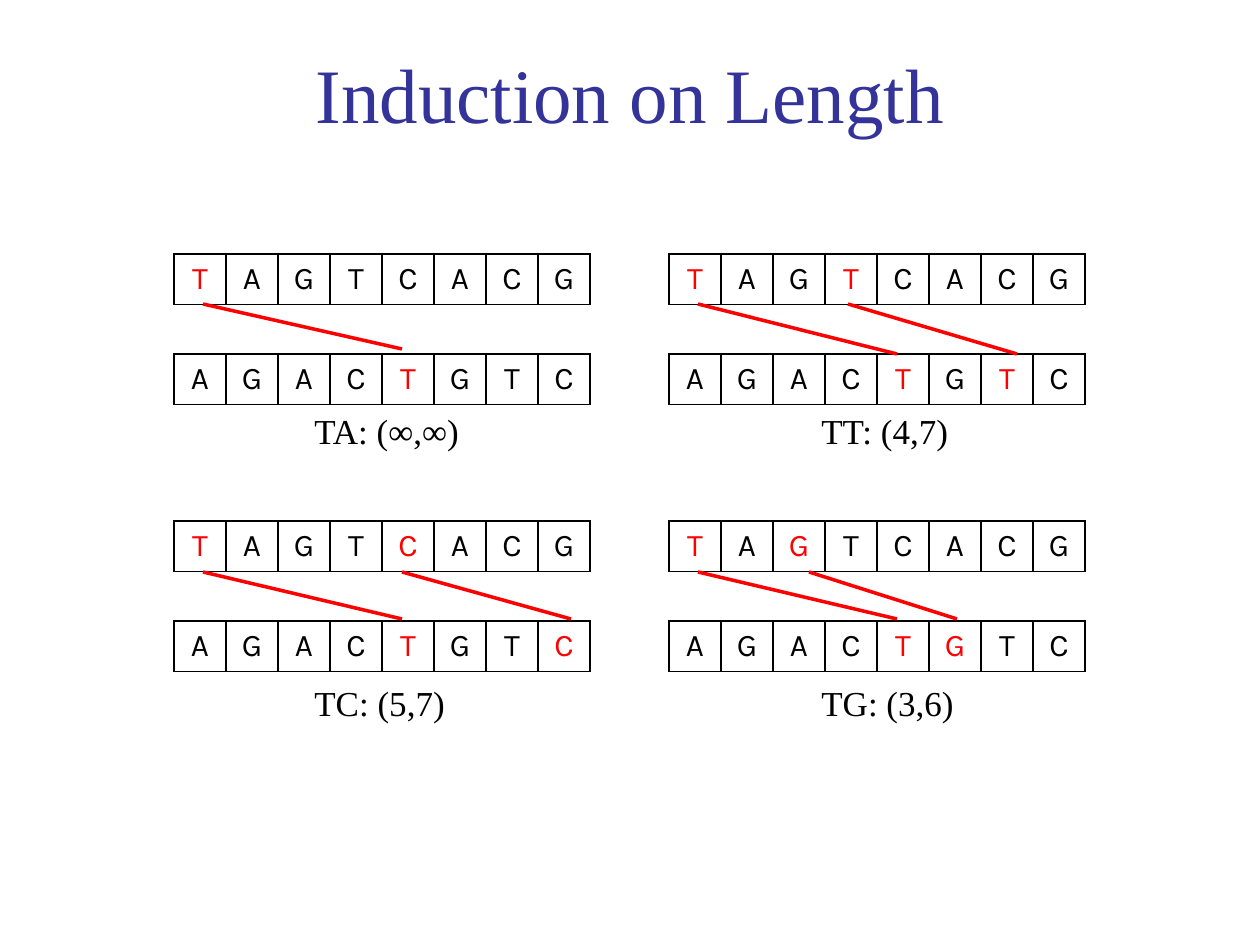
from lxml.etree import SubElement
from pptx import Presentation
from pptx.dml.color import RGBColor
from pptx.enum.shapes import MSO_CONNECTOR
from pptx.enum.text import MSO_ANCHOR, PP_ALIGN
from pptx.oxml.ns import qn
from pptx.util import Emu, Pt

COLORS = {"title": "333399", "ink": "000000", "mark": "FF0000"}
SERIF, SANS = "Times New Roman", "Karla"
CELL, ROW, STEP = 52, 50, 100
TOP, LOW = "TAGTCACG", "AGACTGTC"


def px(n):
    return Emu(round(n * 914400 / 126))


class Deck:
    def __init__(self):
        self.show = Presentation()
        self.show.slide_width = px(1260)
        self.show.slide_height = px(945)
        self.slide = self.show.slides.add_slide(self.show.slide_layouts[6])

    def run(self, para, text, size, font, color):
        run = para.add_run()
        run.text = text
        run.font.size = Pt(size)
        run.font.name = font
        run.font.color.rgb = RGBColor.from_string(COLORS[color])

    def text(self, x, y, w, h, words, size, color="ink",
             align=PP_ALIGN.LEFT, anchor=MSO_ANCHOR.TOP):
        frame = self.slide.shapes.add_textbox(px(x), px(y), px(w), px(h)).text_frame
        frame.word_wrap = True
        frame.vertical_anchor = anchor
        para = frame.paragraphs[0]
        para.alignment = align
        self.run(para, words, size, SERIF, color)

    def border(self, cell):
        props = cell._tc.get_or_add_tcPr()
        for side in ("a:lnL", "a:lnR", "a:lnT", "a:lnB"):
            line = SubElement(props, qn(side), w=str(Pt(1)))
            fill = SubElement(line, qn("a:solidFill"))
            SubElement(fill, qn("a:srgbClr"), val=COLORS["ink"])

    def strip(self, x, y, word, marks):
        count = len(word)
        table = self.slide.shapes.add_table(
            1, count, px(x), px(y), px(CELL * count), px(ROW)).table
        table.first_row = table.horz_banding = False
        for i, char in enumerate(word):
            table.columns[i].width = px(CELL)
            cell = table.cell(0, i)
            self.border(cell)
            cell.fill.background()
            para = cell.text_frame.paragraphs[0]
            para.alignment = PP_ALIGN.CENTER
            self.run(para, char, 18, SANS, "mark" if i in marks else "ink")

    def line(self, x1, y1, x2, y2):
        link = self.slide.shapes.add_connector(
            MSO_CONNECTOR.STRAIGHT, px(x1), px(y1), px(x2), px(y2))
        link.line.color.rgb = RGBColor.from_string(COLORS["mark"])
        link.line.width = Pt(2)
        SubElement(link._element.spPr, qn("a:effectLst"))

    def panel(self, x, y, label, spot, tops, lows, span, links):
        self.strip(x, y, TOP, tops)
        self.strip(x, y + STEP, LOW, lows)
        for start, end in links:
            self.line(x + start, y + span[0], x + end, y + span[1])
        self.text(*spot, 179, 55, label, 20)


def main():
    deck = Deck()
    deck.text(105, 39, 1050, 106, "Induction on Length", 44, "title",
              PP_ALIGN.CENTER, MSO_ANCHOR.BOTTOM)
    left, right, high, low = 174, 669, 254, 521
    base = (29, 228)
    panels = [
        (left, high, "TA: (∞,∞)", (302, 403), {0}, {4}, (50, 95), [base]),
        (right, high, "TT: (4,7)", (809, 403), {0, 3}, {4, 6}, (50, 100),
         [base, (179, 348)]),
        (left, low, "TC: (5,7)", (302, 675), {0, 4}, {4, 7}, (51, 98),
         [base, (228, 397)]),
        (right, low, "TG: (3,6)", (809, 675), {0, 2}, {4, 5}, (51, 98),
         [base, (140, 288)]),
    ]
    for panel in panels:
        deck.panel(*panel)
    deck.show.save("out.pptx")


if __name__ == "__main__":
    main()
